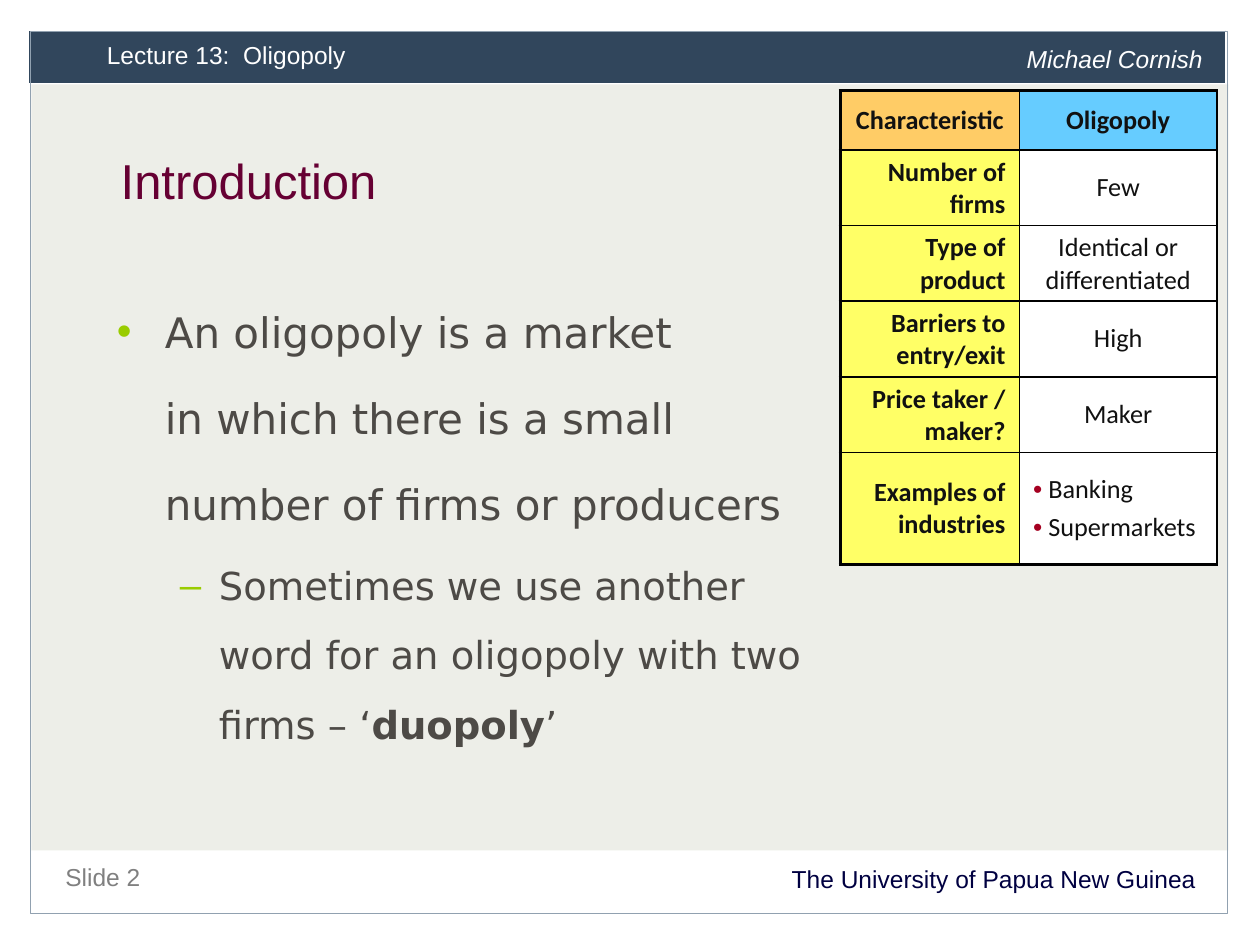
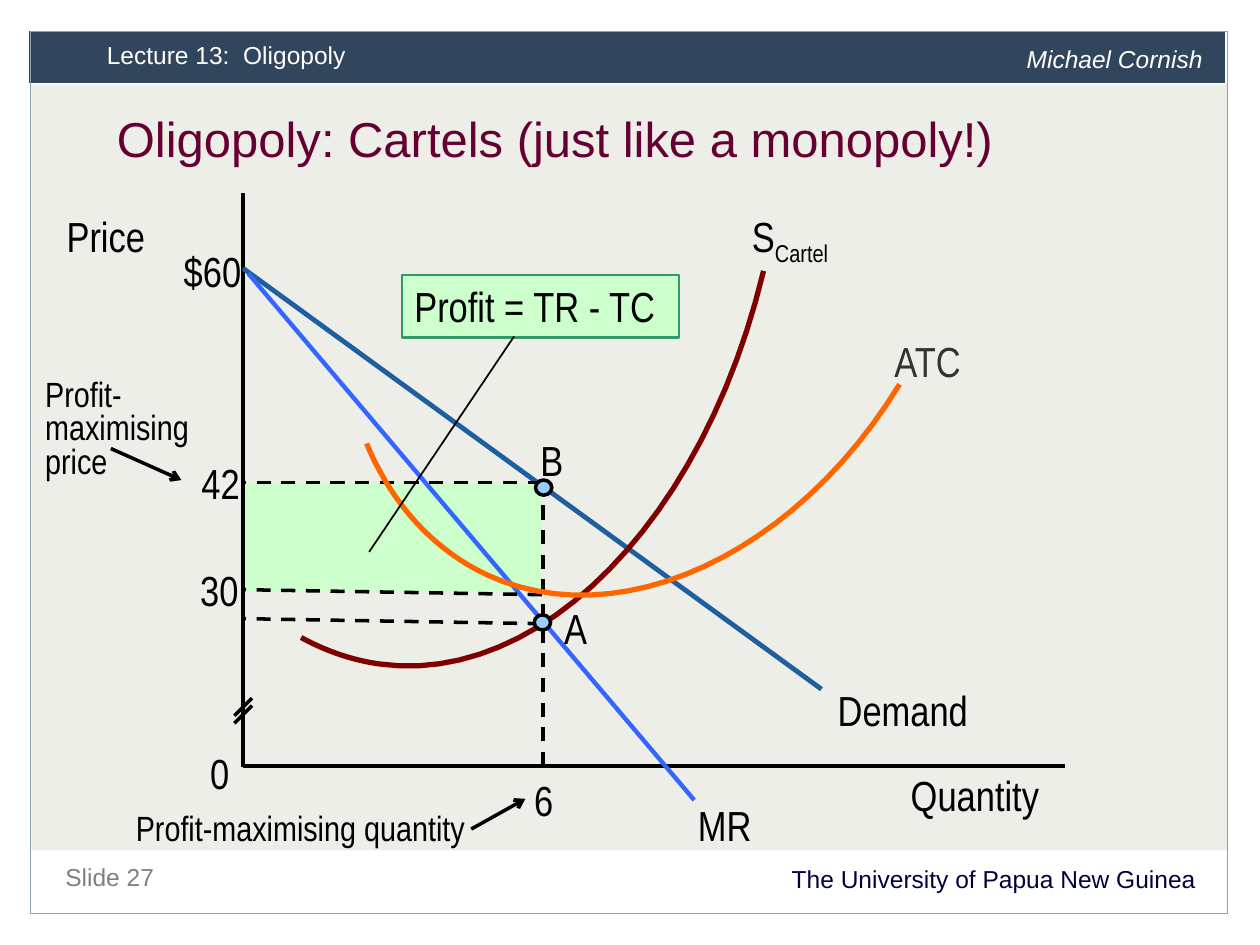
from dataclasses import dataclass

from lxml import etree
from pptx import Presentation
from pptx.dml.color import RGBColor
from pptx.enum import dml, shapes, text
from pptx.oxml.ns import qn
from pptx.util import Inches, Pt

CENTER, RIGHT = text.PP_ALIGN.CENTER, text.PP_ALIGN.RIGHT


@dataclass(frozen=True)
class Theme:
    body_font: str = "DejaVu Sans"
    frame_font: str = "Arial"
    table_font: str = "Calibri"
    graph_font: str = "Arial Narrow"
    frame_size: float = 14
    title_size: float = 28
    body_size: float = 24
    sub_size: float = 22
    table_size: float = 15
    graph_size: float = 24
    note_size: float = 20
    white: str = "FFFFFF"
    black: str = "000000"
    panel: str = "EDEEE8"
    band: str = "31465C"
    outline: str = "91A1B0"
    university: str = "000041"
    number: str = "808080"
    title: str = "660033"
    body: str = "4D4A46"
    bullet: str = "99CC00"
    cell_text: str = "111111"
    cell_bullet: str = "A50021"
    header_left: str = "FFCC66"
    header_right: str = "66CCFF"
    row_label: str = "FFFF66"
    profit: str = "CCFFCC"
    profit_line: str = "339966"
    demand: str = "205F9F"
    revenue: str = "3366FF"
    supply: str = "800000"
    cost: str = "FF6600"
    cost_label: str = "333333"
    point: str = "99CCFF"


def rgb(color):
    return RGBColor.from_string(color)


def set_values(target, **values):
    for name, value in values.items():
        setattr(target, name, value)


def add_element(parent, tag, **attributes):
    return etree.SubElement(parent, qn(tag), **attributes)


def bezier(start, control1, control2, end, steps=24):
    """Points along a cubic curve, without its start."""
    points = []
    for step in range(1, steps + 1):
        t = step / steps
        weights = ((1 - t) ** 3, 3 * t * (1 - t) ** 2, 3 * t * t * (1 - t), t ** 3)
        points.append(tuple(
            sum(w * p[axis] for w, p in zip(weights, (start, control1, control2, end)))
            for axis in (0, 1)))
    return points


class Deck:
    def __init__(self, theme):
        self.theme = theme
        self.presentation = Presentation()
        set_values(self.presentation, slide_width=Inches(10), slide_height=Inches(7.5))
        self.slide = None

    def new_slide(self, number, title, left, top):
        """Start a slide with the shared bands, footers and title."""
        theme = self.theme
        self.slide = self.presentation.slides.add_slide(self.presentation.slide_layouts[6])
        self.box((0.25, 0.67, 9.5, 6.08), theme.panel)
        self.box((0.23, 0.24, 9.5, 0.42), theme.band, theme.white, 0.5)
        self.box((0.24, 0.25, 9.5, 7), None, theme.outline, 0.75)
        frame_style = dict(font=theme.frame_font, size=theme.frame_size)
        self.label((0.42, 6.83, 9.17, 0.32), "The University of Papua New Guinea",
                   color=theme.university, spacing=Pt(15), align=RIGHT, **frame_style)
        self.label((0.42, 6.75, 4.33, 0.34), f"Slide {number}",
                   color=theme.number, spacing=Pt(20), **frame_style)
        self.label((0.75, 0.25, 6.13, 0.37), "Lecture 13:  Oligopoly",
                   color=theme.white, spacing=Pt(18), **frame_style)
        self.label((8.05, 0.28, 1.64, 0.37), "Michael Cornish", color=theme.white,
                   spacing=Pt(18), italic=True, **frame_style)
        self.label((left, top, 8.13, 0.75), title, font=theme.frame_font,
                   size=theme.title_size, color=theme.title, spacing=Pt(26))

    def box(self, place, fill, line=None, width=1, kind=shapes.MSO_SHAPE.RECTANGLE):
        shape = self.slide.shapes.add_shape(kind, *map(Inches, place))
        self.paint(shape, fill, line, width)
        return shape

    def paint(self, shape, fill, line, width):
        shape.shadow.inherit = False
        if fill:
            shape.fill.solid()
            shape.fill.fore_color.rgb = rgb(fill)
        else:
            shape.fill.background()
        if line:
            shape.line.color.rgb = rgb(line)
            shape.line.width = Pt(width)
        else:
            shape.line.fill.background()

    def add_runs(self, paragraph, content, font, size, color, align=None, spacing=None,
                 before=0, **extra):
        """Fill a paragraph with a string or with (string, font values) pairs."""
        set_values(paragraph, alignment=align, line_spacing=spacing, space_before=Pt(before))
        runs = []
        for words, values in [(content, {})] if isinstance(content, str) else content:
            run = paragraph.add_run()
            run.text = words
            set_values(run.font, **{"name": font, "size": Pt(size), **extra, **values})
            run.font.color.rgb = rgb(color)
            runs.append(run)
        return runs

    def label(self, place, lines, **style):
        """Text box holding one string or a list of paragraphs."""
        frame = self.slide.shapes.add_textbox(*map(Inches, place)).text_frame
        frame.word_wrap = True
        return self.fill_frame(frame, lines, **style)

    def fill_frame(self, frame, lines, **style):
        runs = []
        for index, line in enumerate([lines] if isinstance(lines, str) else lines):
            paragraph = frame.add_paragraph() if index else frame.paragraphs[0]
            runs += self.add_runs(paragraph, line, **style)
        return runs

    def indent(self, paragraph, left, hanging=0, mark=None, color=None):
        properties = paragraph._p.get_or_add_pPr()
        properties.set("marL", str(Inches(left)))
        properties.set("indent", str(-Inches(hanging)))
        if mark:
            add_element(add_element(properties, "a:buClr"), "a:srgbClr", val=color)
            add_element(properties, "a:buFont", typeface="Arial")
            add_element(properties, "a:buChar", char=mark)
        else:
            add_element(properties, "a:buNone")

    def bullets(self, place, items):
        """Items are (content, size, left margin, hanging, mark)."""
        theme = self.theme
        frame = self.slide.shapes.add_textbox(*map(Inches, place)).text_frame
        frame.word_wrap = True
        for index, (content, size, left, hanging, mark) in enumerate(items):
            paragraph = frame.add_paragraph() if index else frame.paragraphs[0]
            self.indent(paragraph, left, hanging, mark, theme.bullet)
            self.add_runs(paragraph, content, theme.body_font, size, theme.body,
                          spacing=1.5, before=6 if index else 0)

    def line(self, start, end, color, width, dashed=False, arrow=False):
        connector = self.slide.shapes.add_connector(
            shapes.MSO_CONNECTOR.STRAIGHT, *map(Inches, start + end))
        connector.line.color.rgb = rgb(color)
        connector.line.width = Pt(width)
        if dashed:
            connector.line.dash_style = dml.MSO_LINE.DASH
        if arrow:
            add_element(connector.line._get_or_add_ln(), "a:tailEnd", type="arrow")
        add_element(connector._element.spPr, "a:effectLst")

    def curve(self, start, segments, color):
        points = [start]
        for segment in segments:
            points += bezier(points[-1], *segment)
        scaled = [(Inches(x), Inches(y)) for x, y in points]
        builder = self.slide.shapes.build_freeform(*scaled[0])
        builder.add_line_segments(scaled[1:], close=False)
        self.paint(builder.convert_to_shape(), None, color, 3)

    def borders(self, cell, **widths):
        properties = cell._tc.get_or_add_tcPr()
        for index, side in enumerate("LRTB"):
            border = etree.Element(qn(f"a:ln{side}"), w=str(Pt(widths[side])))
            add_element(add_element(border, "a:solidFill"), "a:srgbClr", val=self.theme.black)
            properties.insert(index, border)

    def table(self, place, widths, heights, rows):
        theme = self.theme
        table = self.slide.shapes.add_table(
            len(rows), len(widths), *map(Inches, place)).table
        set_values(table, first_row=False, horz_banding=False)
        for column, width in zip(table.columns, widths):
            column.width = Inches(width)
        for row, height in zip(table.rows, heights):
            row.height = Inches(height)
        last = len(rows) - 1
        for r, row in enumerate(rows):
            for c, content in enumerate(row):
                cell = table.cell(r, c)
                set_values(cell, vertical_anchor=text.MSO_ANCHOR.MIDDLE,
                           margin_left=Inches(0.11), margin_right=Inches(0.11),
                           margin_top=Inches(0.05), margin_bottom=Inches(0.05))
                fills = ((theme.header_left, theme.header_right) if r == 0
                         else (theme.row_label, theme.white))
                cell.fill.solid()
                cell.fill.fore_color.rgb = rgb(fills[c])
                listed = isinstance(content, list)
                align = None if listed else RIGHT if r and c == 0 else CENTER
                self.fill_frame(cell.text_frame, content, font=theme.table_font,
                                size=theme.table_size, color=theme.cell_text,
                                align=align, bold=r == 0 or c == 0)
                if listed:
                    for index, paragraph in enumerate(cell.text_frame.paragraphs):
                        paragraph.space_before = Pt(3 if index else 0)
                        self.indent(paragraph, 0.12, 0.12, "•", theme.cell_bullet)
                self.borders(cell, L=1 if c else 2.25, R=1,
                             T=1 if r else 2.25, B=2.25 if r == last else 1)


def introduction(deck):
    theme = deck.theme
    deck.new_slide(2, "Introduction", 0.86, 1.25)
    main_size, sub_size = theme.body_size, theme.sub_size
    deck.bullets((0.83, 2.18, 5.67, 3.57), [
        ("An oligopoly is a market", main_size, 0.38, 0.38, "•"),
        ("in which there is a small", main_size, 0.38, 0, None),
        ("number of firms or producers", main_size, 0.38, 0, None),
        ([("Sometimes we use another word for an oligopoly with two firms – ‘", {}),
          ("duopoly", {"bold": True}), ("’", {})], sub_size, 0.81, 0.31, "–"),
    ])
    deck.table((6.67, 0.72, 2.99, 3.76), (1.42, 1.57), (0.47, 0.6, 0.6, 0.6, 0.6, 0.89), [
        ("Characteristic", "Oligopoly"),
        ("Number of firms", "Few"),
        ("Type of product", "Identical or differentiated"),
        ("Barriers to entry/exit", "High"),
        ("Price taker / maker?", "Maker"),
        ("Examples of industries", ["Banking", "Supermarkets"]),
    ])


def cartel_graph(deck):
    theme = deck.theme
    black = theme.black
    deck.new_slide(27, "Oligopoly: Cartels (just like a monopoly!)", 0.83, 0.92)
    axis_x, axis_y, quantity_x = 1.93, 6.08, 4.3

    deck.box((axis_x, 3.83, 2.37, 0.87), theme.profit)
    deck.line((axis_x, 1.53), (axis_x, 6.09), black, 2.5)
    deck.line((axis_x, axis_y), (8.45, axis_y), black, 2.5)
    deck.line((axis_x, 2.13), (6.52, 5.47), theme.demand, 2.75)
    deck.line((1.97, 2.17), (5.51, 6.35), theme.revenue, 2.5)
    deck.curve((6.06, 2.15), [((5.59, 4.12), (4.29, 5.45), (3.01, 5.27)),
                              ((2.8, 5.24), (2.59, 5.17), (2.39, 5.06))], theme.supply)
    deck.line((4.31, axis_y), (4.31, 3.86), black, 2, dashed=True)
    for right_y, left_y in ((3.83, 3.83), (4.72, 4.68), (4.95, 4.91)):
        deck.line((quantity_x, right_y), (axis_x, left_y), black, 2, dashed=True)
    for left, top in ((4.25, 3.81), (4.24, 4.88)):
        deck.box((left, top, 0.13, 0.12), theme.point, black, 2, shapes.MSO_SHAPE.OVAL)
    for break_y in (5.54, 5.6):
        deck.line((2, break_y), (1.86, break_y + 0.14), black, 2)
    deck.curve((7.14, 3.05), [((6.31, 4.41), (4.91, 5.05), (3.86, 4.56)),
                              ((3.44, 4.36), (3.11, 4), (2.91, 3.52))], theme.cost)

    graph_style = dict(font=theme.graph_font, size=theme.graph_size)
    for words, left, top, width in (
            ("Price", 0.43, 1.62, 1.79), ("Quantity", 7.13, 6.06, 1.56),
            ("Demand", 6.55, 5.38, 2.08), ("MR", 5.44, 6.3, 1),
            ("0", 1.57, 5.88, 0.5), ("$60", 1.36, 1.9, 0.82),
            ("42", 1.5, 3.58, 0.76), ("30", 1.49, 4.43, 1),
            ("6", 4.14, 6.1, 0.5), ("B", 4.19, 3.4, 0.5), ("A", 4.38, 4.73, 0.5)):
        deck.label((left, top, width, 0.44), words, color=black, **graph_style)
    deck.label((7, 2.61, 0.79, 0.44), "ATC", color=theme.cost_label, **graph_style)
    supply_runs = deck.label((5.87, 1.62, 1.14, 0.5), [[("S", {}), ("Cartel", {})]],
                             color=black, **graph_style)
    supply_runs[1].font._element.set("baseline", "-25000")

    callout = deck.box((3.19, 2.18, 2.2, 0.5), theme.profit, theme.profit_line, 1.25)
    callout.text_frame.word_wrap = True
    deck.fill_frame(callout.text_frame, "Profit = TR - TC", color=black,
                    align=text.PP_ALIGN.LEFT, **graph_style)
    deck.line((4.08, 2.67), (2.93, 4.38), black, 1)

    note_style = dict(font=theme.graph_font, size=theme.note_size, color=black, spacing=0.8)
    deck.label((0.98, 6.42, 3.74, 0.37), "Profit-maximising quantity", **note_style)
    deck.line((3.74, 6.58), (4.17, 6.34), black, 2, arrow=True)
    deck.label((0.26, 2.97, 1.35, 0.91), ["Profit-", "maximising", "price"], **note_style)
    deck.line((0.88, 3.56), (1.44, 3.81), black, 2, arrow=True)


def main():
    deck = Deck(Theme())
    introduction(deck)
    cartel_graph(deck)
    deck.presentation.save("out.pptx")


if __name__ == "__main__":
    main()
